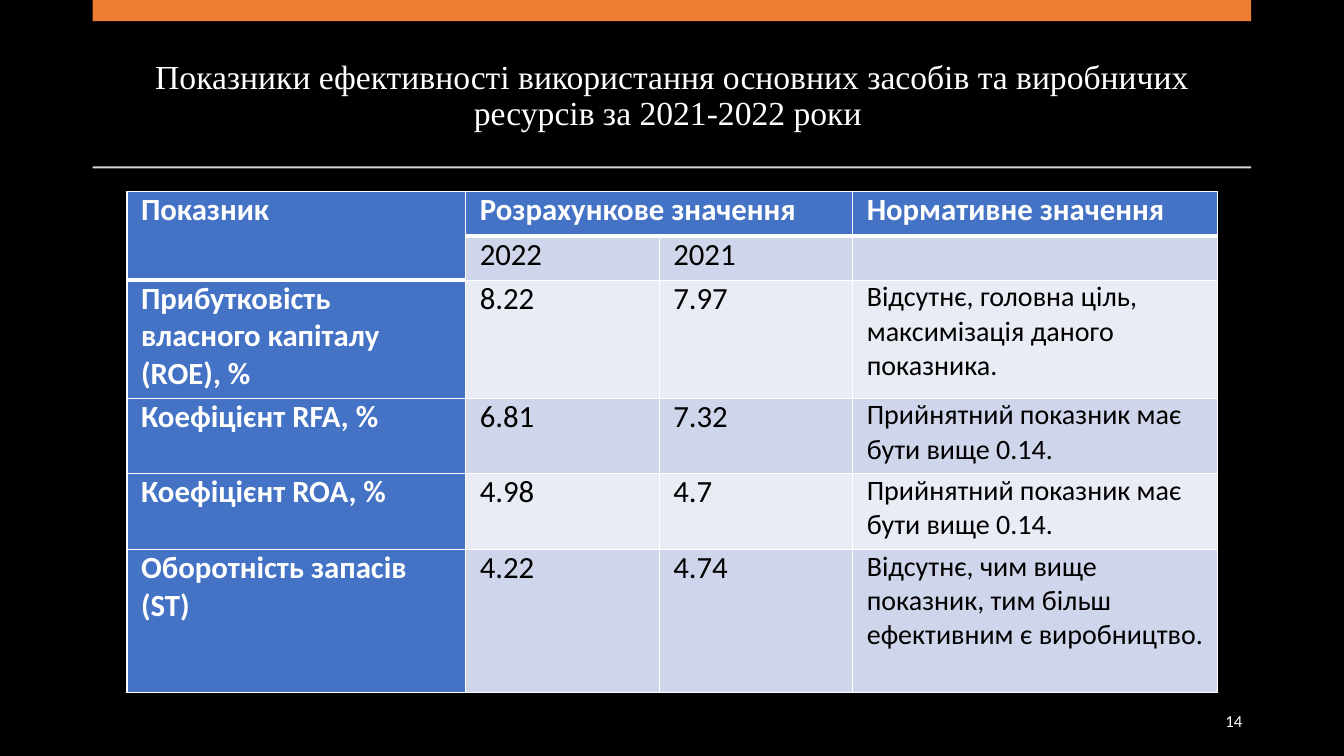
from dataclasses import dataclass

from lxml.etree import SubElement
from pptx import Presentation
from pptx.dml.color import RGBColor
from pptx.enum.shapes import MSO_SHAPE
from pptx.enum.text import MSO_ANCHOR, MSO_AUTO_SIZE, PP_ALIGN
from pptx.oxml.ns import qn
from pptx.util import Inches, Pt

WIDTH, HEIGHT = Inches(13.33), Inches(7.5)
BLACK = RGBColor(0x00, 0x00, 0x00)
WHITE = RGBColor(0xFF, 0xFF, 0xFF)
ORANGE = RGBColor(0xED, 0x7D, 0x31)
GRAY = RGBColor(0xD5, 0xD5, 0xD5)
BLUE = RGBColor(0x44, 0x72, 0xC4)
BANDS = (RGBColor(0xE9, 0xEB, 0xF5), RGBColor(0xCF, 0xD5, 0xEA))

COLUMNS = (25.2, 14.4, 14.4, 27.16)
ROWS = (5.87, 5.87, 15.6, 10, 10, 18.93)
CONTENT = (
    ("Показник", "Розрахункове значення", "", "Нормативне значення"),
    ("", "2022", "2021", ""),
    ("Прибутковість власного капіталу (ROE), %", "8.22", "7.97",
     "Відсутнє, головна ціль, максимізація даного показника."),
    ("Коефіцієнт RFA, %", "6.81", "7.32", "Прийнятний показник має бути вище 0.14."),
    ("Коефіцієнт ROA, %", "4.98", "4.7", "Прийнятний показник має бути вище 0.14."),
    ("Оборотність запасів (ST)", "4.22", "4.74",
     "Відсутнє, чим вище показник, тим більш ефективним є виробництво."),
)


@dataclass(frozen=True)
class Area:
    """Percentages of the slide's width and height."""
    left: float
    top: float
    width: float
    height: float

    def lengths(self) -> tuple:
        return across(self.left), down(self.top), across(self.width), down(self.height)


@dataclass(frozen=True)
class Bar:
    area: Area
    color: RGBColor


TITLE = Area(6.9, 4.93, 86.2, 15.73)
TABLE = Area(9.45, 25.33, sum(COLUMNS), sum(ROWS))
NUMBER = Area(70.67, 92.67, 22.5, 5.33)
BARS = (
    Bar(Area(6.9, 0, 86.2, 2.8), ORANGE),
    Bar(Area(6.9, 22, 86.2, 0.27), GRAY),
)


def across(percent: float) -> int:
    return round(WIDTH * percent / 100)


def down(percent: float) -> int:
    return round(HEIGHT * percent / 100)


def write(frame, text: str, *, size: float, color: RGBColor, font: str = "Calibri",
          bold: bool = False, align=PP_ALIGN.LEFT, spacing: float = 1.0) -> None:
    frame.word_wrap = True
    para = frame.paragraphs[0]
    para.alignment = align
    para.line_spacing = spacing
    span = para.add_run()
    span.text = text
    span.font.name = font
    span.font.size = Pt(size)
    span.font.bold = bold
    span.font.color.rgb = color


def draw_bar(page, bar: Bar) -> None:
    box = page.shapes.add_shape(MSO_SHAPE.RECTANGLE, *bar.area.lengths())
    box.shadow.inherit = False
    box.fill.solid()
    box.fill.fore_color.rgb = bar.color
    box.line.fill.background()


def draw_borders(cell, top: float, bottom: float) -> None:
    properties = cell._tc.get_or_add_tcPr()
    sides = (("a:lnL", 1), ("a:lnR", 1), ("a:lnT", top), ("a:lnB", bottom))
    for index, (tag, points) in enumerate(sides):
        border = SubElement(properties, qn(tag), w=str(Pt(points)))
        fill = SubElement(border, qn("a:solidFill"))
        SubElement(fill, qn("a:srgbClr"), val=str(WHITE))
        properties.insert(index, border)


def is_header(row: int, column: int) -> bool:
    return row == 0 or (row, column) == (1, 0)


def draw_cell(cell, row: int, column: int, text: str) -> None:
    heading = row == 0 or column == 0
    cell.margin_left = cell.margin_right = Inches(0.14)
    cell.margin_top = cell.margin_bottom = 0
    cell.fill.solid()
    cell.fill.fore_color.rgb = BLUE if heading else BANDS[row % 2]
    draw_borders(cell, top=3 if row and is_header(row - 1, column) else 1,
                 bottom=3 if is_header(row, column) else 1)
    if text:
        write(cell.text_frame, text, size=20 if row > 1 and column == 3 else 22,
              color=WHITE if heading else BLACK, bold=heading)


def draw_table(page) -> None:
    table = page.shapes.add_table(len(ROWS), len(COLUMNS), *TABLE.lengths()).table
    table.first_row = table.horz_banding = False
    for column, percent in zip(table.columns, COLUMNS):
        column.width = across(percent)
    for row, percent in zip(table.rows, ROWS):
        row.height = down(percent)
    for row, texts in enumerate(CONTENT):
        for column, text in enumerate(texts):
            draw_cell(table.cell(row, column), row, column, text)
    table.cell(0, 0).merge(table.cell(1, 0))
    table.cell(0, 1).merge(table.cell(0, 2))


def main() -> None:
    deck = Presentation()
    deck.slide_width, deck.slide_height = WIDTH, HEIGHT
    page = deck.slides.add_slide(deck.slide_layouts[5])
    page.background.fill.solid()
    page.background.fill.fore_color.rgb = BLACK

    title = page.shapes.title
    title.left, title.top, title.width, title.height = TITLE.lengths()
    title.text_frame.auto_size = MSO_AUTO_SIZE.NONE
    title.text_frame.vertical_anchor = MSO_ANCHOR.MIDDLE
    write(title.text_frame,
          "Показники ефективності використання основних засобів та виробничих "
          "ресурсів за 2021-2022 роки ",
          size=24, color=WHITE, font="Times New Roman", align=PP_ALIGN.CENTER, spacing=0.9)

    for bar in BARS:
        draw_bar(page, bar)
    draw_table(page)

    number = page.shapes.add_textbox(*NUMBER.lengths())
    number.text_frame.vertical_anchor = MSO_ANCHOR.MIDDLE
    write(number.text_frame, "14", size=12, color=WHITE, align=PP_ALIGN.RIGHT)
    deck.save("out.pptx")


if __name__ == "__main__":
    main()
